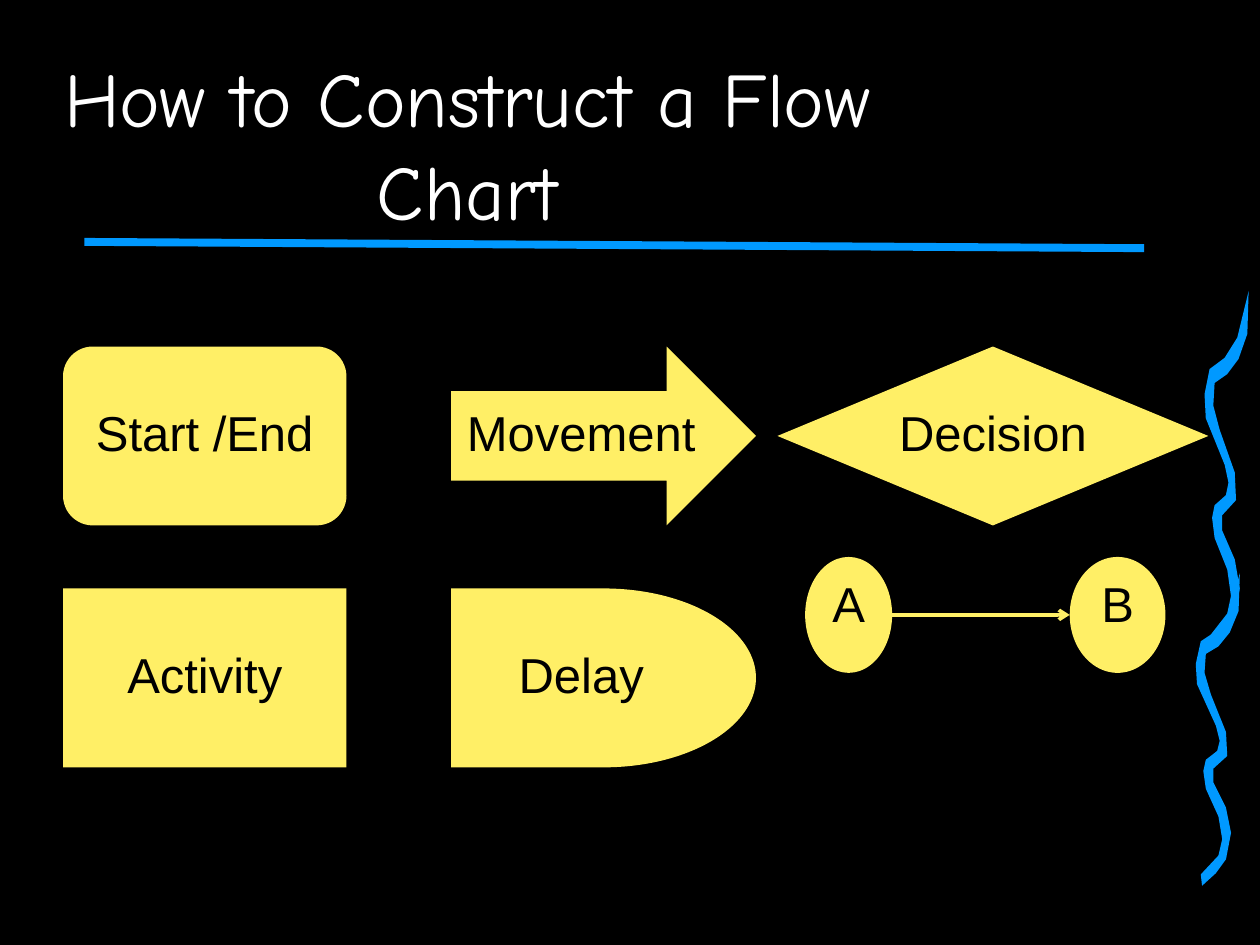
import pptx
import pptx.dml.color
import pptx.enum.shapes
import pptx.enum.text
import pptx.oxml
import pptx.oxml.ns
import pptx.util

SHAPE = pptx.enum.shapes.MSO_SHAPE
ANCHOR = pptx.enum.text.MSO_ANCHOR
PX = 9144
BLACK, WHITE, BLUE, YELLOW = "000000", "FFFFFF", "0099FF", "FFEF66"
RIBBON = [
    (4, 274), (18, 256), (21, 242), (18, 221), (8, 196), (6, 180), (8, 170),
    (17, 162), (19, 152), (16, 138), (1, 101), (0, 82), (4, 62), (16, 53),
    (26, 37), (35, 0), (34, 34), (27, 54), (18, 66), (8, 73), (7, 91),
    (12, 110), (24, 144), (25, 166), (14, 178), (14, 190), (24, 213),
    (28, 236), (24, 260), (16, 273), (5, 284),
]


def color(value):
    return pptx.dml.color.RGBColor.from_string(value)


class FlowPage:
    """Holds the style and the current slide, and adds elements to it."""

    def __init__(self, page):
        self.shapes = page.shapes
        page.background.fill.solid()
        page.background.fill.fore_color.rgb = color(BLACK)

    def label(self, box, text, font, size, ink, anchor):
        frame = box.text_frame
        frame.text = text
        frame.word_wrap = True
        frame.vertical_anchor = anchor
        para = frame.paragraphs[0]
        para.alignment = pptx.enum.text.PP_ALIGN.CENTER
        for span in para.runs:
            span.font.name = font
            span.font.size = pptx.util.Pt(size)
            span.font.color.rgb = color(ink)
        return para

    def paint(self, shape, fill):
        shape.shadow.inherit = False
        shape.fill.solid()
        shape.fill.fore_color.rgb = color(fill)
        shape.line.fill.background()

    def title(self, text, left, top, width, height):
        box = self.shapes.title
        box.left, box.top, box.width, box.height = (
            n * PX for n in (left, top, width, height))
        self.label(box, text, "Comic Neue", 44, WHITE, ANCHOR.BOTTOM)

    def symbol(self, kind, text, left, top, width, height, anchor=ANCHOR.MIDDLE):
        shape = self.shapes.add_shape(
            kind, *(n * PX for n in (left, top, width, height)))
        self.paint(shape, YELLOW)
        para = self.label(shape, text, "Arial", 28, BLACK, anchor)
        para.line_spacing = 0.9

    def line(self, start, end, ink, weight, arrow=False):
        line = self.shapes.add_connector(
            pptx.enum.shapes.MSO_CONNECTOR.STRAIGHT,
            *(n * PX for n in start + end))
        line.line.color.rgb = color(ink)
        line.line.width = pptx.util.Pt(weight)
        properties = line._element.spPr
        namespace = pptx.oxml.ns.nsdecls("a")
        if arrow:
            properties.find(pptx.oxml.ns.qn("a:ln")).append(
                pptx.oxml.parse_xml(f'<a:tailEnd {namespace} type="arrow"/>'))
        properties.append(pptx.oxml.parse_xml(f"<a:effectLst {namespace}/>"))

    def ribbon(self, left, top, height):
        stretch = height / RIBBON[-1][1]
        points = [(left + x, round(top + y * stretch)) for x, y in RIBBON]
        builder = self.shapes.build_freeform(*points[0], scale=PX)
        builder.add_line_segments(points[1:], close=True)
        self.paint(builder.convert_to_shape(), BLUE)


def main():
    deck = pptx.Presentation()
    deck.slide_width, deck.slide_height = 1000 * PX, 750 * PX
    flow = FlowPage(deck.slides.add_slide(deck.slide_layouts[5]))

    flow.ribbon(949, 455, 248)
    flow.ribbon(956, 231, 284)
    flow.line((67, 192), (908, 197), BLUE, 4.5)
    flow.title("How to Construct a Flow Chart", 0, 0, 742, 192)

    upper, lower, height = 275, 467, 142
    for kind, text, left, top, width in [
        (SHAPE.FLOWCHART_DECISION, "Decision", 617, upper, 342),
        (SHAPE.RIGHT_ARROW, "Movement", 358, upper, 242),
        (SHAPE.FLOWCHART_DELAY, "Delay", 358, lower, 242),
        (SHAPE.ROUNDED_RECTANGLE, "Start /End", 50, upper, 225),
        (SHAPE.RECTANGLE, "Activity", 50, lower, 225),
    ]:
        flow.symbol(kind, text, left, top, width, height)

    for text, left, width in [("A", 639, 69), ("B", 849, 76)]:
        flow.symbol(SHAPE.OVAL, text, left, 442, width, 92, ANCHOR.TOP)
    flow.line((708, 488), (849, 488), YELLOW, 2, arrow=True)

    deck.save("out.pptx")


if __name__ == "__main__":
    main()
